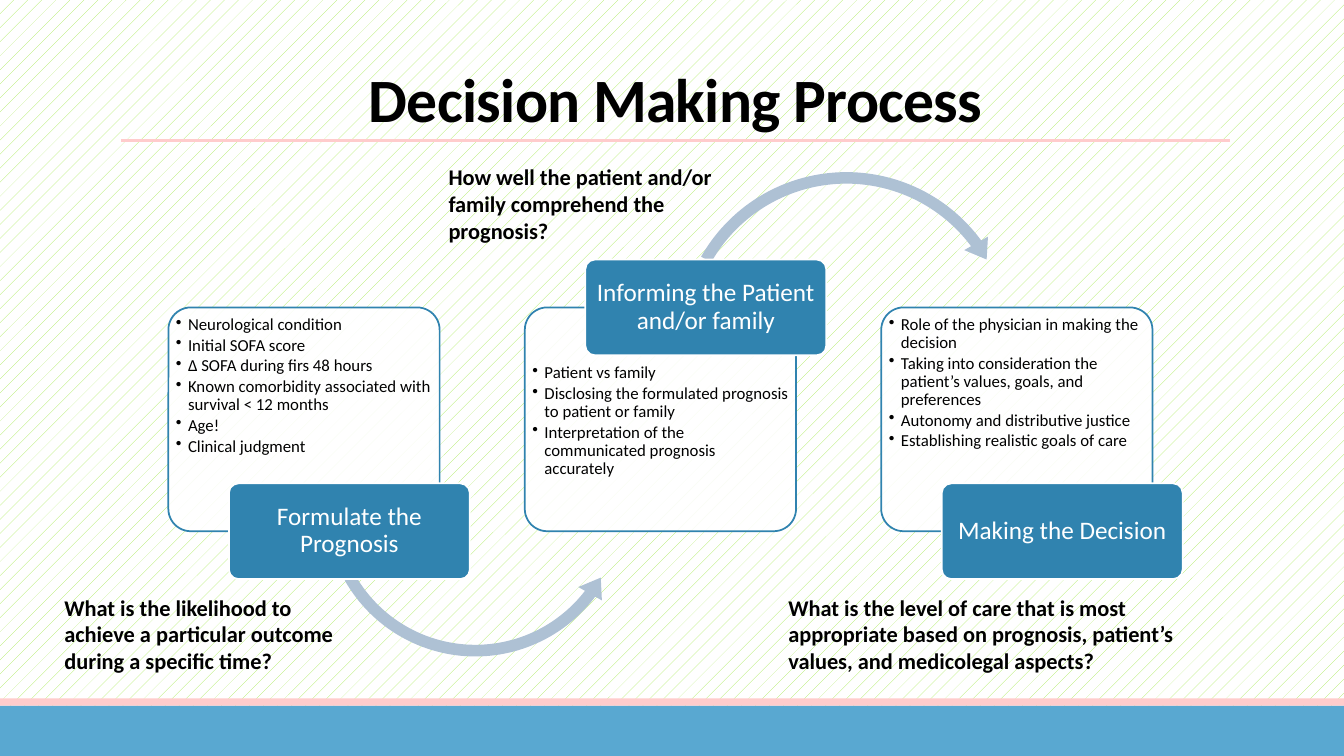
from lxml import etree
from pptx import Presentation
from pptx.dml.color import RGBColor
from pptx.enum.dml import MSO_PATTERN
from pptx.enum.shapes import MSO_CONNECTOR, MSO_SHAPE
from pptx.enum.text import MSO_ANCHOR, MSO_AUTO_SIZE, PP_ALIGN
from pptx.oxml.ns import qn
from pptx.util import Inches, Pt

TITLE = "Decision Making Process"
STEPS = [
    {
        "label": "Formulate the Prognosis",
        "label_on_top": False,
        "points": [
            "Neurological condition",
            "Initial SOFA score",
            "∆ SOFA during firs 48 hours",
            "Known comorbidity associated with survival < 12 months",
            "Age!",
            "Clinical judgment",
        ],
        "arrow": (MSO_SHAPE.LEFT_CIRCULAR_ARROW, (3.15, 3.46, 3.13),
                  (0.037, 4.598, 22.354, 90.245, 0.043)),
    },
    {
        "label": "Informing the Patient and/or family",
        "label_on_top": True,
        "points": [
            "Patient vs family",
            "Disclosing the formulated prognosis to patient or family",
            "Interpretation of the communicated prognosis accurately",
        ],
        "arrow": (MSO_SHAPE.CIRCULAR_ARROW, (6.66, 1.63, 3.47),
                  (0.033, 4.108, 194.137, 125.755, 0.039)),
    },
    {
        "label": "Making the Decision",
        "label_on_top": False,
        "points": [
            "Role of the physician in making the decision",
            "Taking into consideration the patient’s values, goals, and preferences",
            "Autonomy and distributive justice",
            "Establishing realistic goals of care",
        ],
        "arrow": None,
    },
]
QUESTIONS = [  # text, left, top, width
    ("What is the likelihood to achieve a particular outcome during a specific time?",
     0.54, 5.84, 2.95),
    ("How well the patient and/or family comprehend the prognosis?", 4.35, 1.57, 2.95),
    ("What is the level of care that is most appropriate based on prognosis, "
     "patient’s values, and medicolegal aspects?", 7.72, 5.84, 4.48),
]

BLACK = RGBColor(0, 0, 0)
WHITE = RGBColor(0xFF, 0xFF, 0xFF)
BLUE = RGBColor(0x30, 0x83, 0xAF)
LIGHT_BLUE = RGBColor(0x59, 0xA8, 0xD1)
ARROW_BLUE = RGBColor(0xAE, 0xC1, 0xD4)
PINK = RGBColor(0xFF, 0xCC, 0xCC)
LIME = RGBColor(0xA7, 0xEA, 0x52)
FONT = "Calibri"

SLIDE_WIDTH, SLIDE_HEIGHT = 13.33, 7.5
MARGIN, RULE_TOP, RULE_WIDTH = 1.2, 1.39, 11
CARD_LEFT, CARD_TOP, CARD_WIDTH, CARD_HEIGHT = 1.67, 3.05, 2.69, 2.22
CARD_STEP = 3.535
LABEL_WIDTH, LABEL_HEIGHT, LABEL_SHIFT = 2.39, 0.95, 0.6
LABEL_OVERLAP = 0.48


def add_filled(slide, kind, left, top, width, height, fill, line=None):
    shape = slide.shapes.add_shape(
        kind, Inches(left), Inches(top), Inches(width), Inches(height))
    shape.shadow.inherit = False
    shape.fill.solid()
    shape.fill.fore_color.rgb = fill
    if line is None:
        shape.line.fill.background()
    else:
        shape.line.color.rgb = line
        shape.line.width = Pt(1.25)
    return shape


def add_rounded(slide, left, top, width, height, fill, line):
    shape = add_filled(slide, MSO_SHAPE.ROUNDED_RECTANGLE,
                       left, top, width, height, fill, line)
    shape.adjustments[0] = 0.1
    return shape


def set_insets(frame, side, top, bottom):
    frame.margin_left = frame.margin_right = Inches(side)
    frame.margin_top, frame.margin_bottom = Inches(top), Inches(bottom)


def style(paragraph, size, color, bold=False, alignment=PP_ALIGN.LEFT, spacing=1.0):
    paragraph.alignment = alignment
    paragraph.line_spacing = spacing
    font = paragraph.font
    font.name, font.size, font.bold = FONT, Pt(size), bold
    font.color.rgb = color


def add_bullet(paragraph, indent=0.12):
    properties = paragraph._p.get_or_add_pPr()
    properties.set("marL", str(Inches(indent)))
    properties.set("indent", str(-Inches(indent)))
    etree.SubElement(properties, qn("a:buChar"), char="•")


def add_title(slide):
    title = slide.shapes.title
    title.left, title.top = Inches(MARGIN), Inches(0.31)
    title.width, title.height = Inches(RULE_WIDTH), Inches(RULE_TOP - 0.31)
    frame = title.text_frame
    frame.text = TITLE
    frame.auto_size = MSO_AUTO_SIZE.NONE
    frame.vertical_anchor = MSO_ANCHOR.BOTTOM
    paragraph = frame.paragraphs[0]
    style(paragraph, 44, BLACK, True, PP_ALIGN.CENTER, 0.85)
    paragraph.runs[0]._r.get_or_add_rPr().set("spc", "-50")


def add_frame(slide):
    """Pattern, footer bands and the rule under the title."""
    fill = slide.background.fill
    fill.patterned()
    fill.pattern = MSO_PATTERN.PERCENT_5
    fill.fore_color.rgb, fill.back_color.rgb = LIME, WHITE
    for top, height, color in ((7, 0.5, LIGHT_BLUE), (6.93, 0.07, PINK)):
        add_filled(slide, MSO_SHAPE.RECTANGLE, 0, top, SLIDE_WIDTH, height, color)
    rule = slide.shapes.add_connector(
        MSO_CONNECTOR.STRAIGHT, Inches(MARGIN), Inches(RULE_TOP),
        Inches(MARGIN + RULE_WIDTH), Inches(RULE_TOP))
    rule.line.color.rgb, rule.line.width = PINK, Pt(2.25)
    etree.SubElement(rule._element.spPr, qn("a:effectLst"))


def add_step(slide, index, step):
    left = CARD_LEFT + index * CARD_STEP
    on_top = step["label_on_top"]
    card = add_rounded(slide, left, CARD_TOP, CARD_WIDTH, CARD_HEIGHT, WHITE, BLUE)
    color = card.fill._xPr.find(qn("a:solidFill"))[0]
    etree.SubElement(color, qn("a:alpha"), val="90000")
    frame = card.text_frame
    frame.word_wrap = True
    frame.vertical_anchor = MSO_ANCHOR.TOP
    set_insets(frame, 0.01, LABEL_OVERLAP + 0.02 if on_top else 0.02, 0.02)
    frame.text = "\n".join(step["points"])
    for paragraph in frame.paragraphs:
        add_bullet(paragraph)
        style(paragraph, 12, BLACK, spacing=0.9)
        paragraph.space_after = Pt(1.8)

    if step["arrow"]:
        kind, (arrow_left, arrow_top, size), adjustments = step["arrow"]
        arrow = add_filled(slide, kind, arrow_left, arrow_top, size, size, ARROW_BLUE)
        for number, value in enumerate(adjustments):
            arrow.adjustments[number] = value

    edge = CARD_TOP if on_top else CARD_TOP + CARD_HEIGHT
    label = add_rounded(slide, left + LABEL_SHIFT, edge - LABEL_HEIGHT / 2,
                        LABEL_WIDTH, LABEL_HEIGHT, BLUE, WHITE)
    frame = label.text_frame
    frame.word_wrap = True
    frame.vertical_anchor = MSO_ANCHOR.MIDDLE
    set_insets(frame, 0.04, 0.03, 0.03)
    frame.text = step["label"]
    style(frame.paragraphs[0], 18, WHITE, alignment=PP_ALIGN.CENTER, spacing=0.9)


def add_question(slide, text, left, top, width):
    box = slide.shapes.add_textbox(
        Inches(left), Inches(top), Inches(width), Inches(0.91))
    frame = box.text_frame
    frame.word_wrap = True
    frame.auto_size = MSO_AUTO_SIZE.SHAPE_TO_FIT_TEXT
    frame.text = text
    style(frame.paragraphs[0], 16, BLACK, True)


def main():
    presentation = Presentation()
    presentation.slide_width = Inches(SLIDE_WIDTH)
    presentation.slide_height = Inches(SLIDE_HEIGHT)
    slide = presentation.slides.add_slide(presentation.slide_layouts[5])
    add_frame(slide)
    add_title(slide)
    for index, step in enumerate(STEPS):
        add_step(slide, index, step)
    for question in QUESTIONS:
        add_question(slide, *question)
    presentation.save("out.pptx")


if __name__ == "__main__":
    main()
